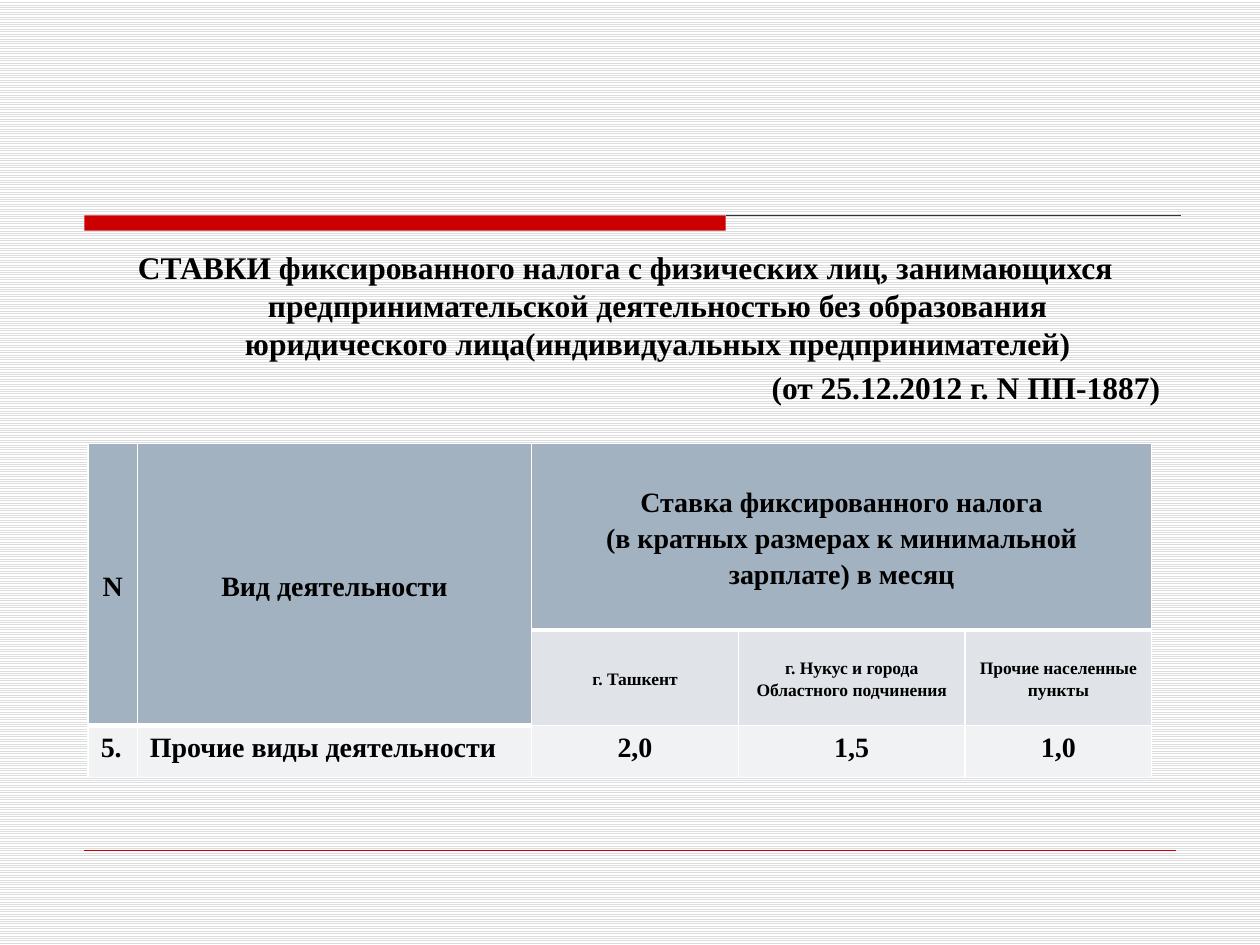
from lxml import etree
from pptx import Presentation
from pptx import util as u
from pptx.dml.color import RGBColor
from pptx.enum import dml, shapes, text
from pptx.oxml.ns import qn

COLORS = {
    "stripe": "DDDDDD",
    "white": "FFFFFF",
    "red": "CC0000",
    "rule": "333333",
    "text": "000000",
    "header": "A3B2C1",
    "subheader": "E0E4E9",
    "row": "F0F2F4",
}
CENTER = text.PP_ALIGN.CENTER


def rgb(name):
    return RGBColor.from_string(COLORS[name])


def format_paragraph(paragraph, size, alignment):
    paragraph.alignment = alignment
    paragraph.font.name = "Times New Roman"
    paragraph.font.size = u.Pt(size)
    paragraph.font.bold = True
    paragraph.font.color.rgb = rgb("text")


presentation = Presentation()
presentation.slide_width = u.Inches(10)
presentation.slide_height = u.Inches(7.5)
slide = presentation.slides.add_slide(presentation.slide_layouts[1])
title = slide.shapes.title.element
title.getparent().remove(title)

background = slide.background.fill
background.patterned()
background.pattern = dml.MSO_PATTERN.LIGHT_HORIZONTAL
background.fore_color.rgb = rgb("stripe")
background.back_color.rgb = rgb("white")

bar = slide.shapes.add_shape(
    shapes.MSO_SHAPE.RECTANGLE,
    u.Inches(0.67), u.Inches(1.71), u.Inches(5.09), u.Inches(0.12),
)
bar.shadow.inherit = False
bar.fill.solid()
bar.fill.fore_color.rgb = rgb("red")
bar.line.fill.background()

for left, right, top, color, width in [
    (5.76, 9.37, 1.71, "rule", 0.75),
    (0.67, 9.33, 6.75, "red", 0.25),
]:
    line = slide.shapes.add_connector(
        shapes.MSO_CONNECTOR.STRAIGHT,
        u.Inches(left), u.Inches(top), u.Inches(right), u.Inches(top),
    )
    line.line.color.rgb = rgb(color)
    line.line.width = u.Pt(width)
    etree.SubElement(line.element.spPr, qn("a:effectLst"))

body = slide.placeholders[1]
body.left, body.top = u.Inches(0.62), u.Inches(1.92)
body.width, body.height = u.Inches(8.75), u.Inches(4.67)
frame = body.text_frame
frame.margin_right = u.Inches(0.16)
frame.text = (
    "СТАВКИ фиксированного налога с физических лиц, занимающихся "
    "предпринимательской деятельностью без образования\v"
    "юридического лица(индивидуальных предпринимателей)\n"
    "(от 25.12.2012 г. N ПП-1887)"
)
for paragraph, alignment in zip(frame.paragraphs, [CENTER, text.PP_ALIGN.RIGHT]):
    format_paragraph(paragraph, 18, alignment)
    paragraph.space_before = u.Pt(3.6)
    properties = paragraph._p.get_or_add_pPr()
    properties.set("marL", str(u.Inches(0.51)))
    properties.set("indent", str(u.Inches(-0.51)))
    properties.insert_element_before(
        etree.Element(qn("a:buNone")), "a:tabLst", "a:defRPr", "a:extLst"
    )

rows = [
    ["N", "Вид деятельности",
     "Ставка фиксированного налога\n(в кратных размерах к минимальной\nзарплате) в месяц", "", ""],
    ["", "", "г. Ташкент", "г. Нукус и города\nОбластного подчинения",
     "Прочие населенные\nпункты"],
    ["5.", "Прочие виды деятельности", "2,0", "1,5", "1,0"],
]
column_widths = [0.39, 3.13, 1.64, 1.8, 1.48]
row_heights = [1.48, 0.76, 0.41]
table = slide.shapes.add_table(
    len(rows), len(column_widths), u.Inches(0.7), u.Inches(3.52),
    u.Inches(sum(column_widths)), u.Inches(sum(row_heights)),
).table
table.horz_banding = False
for column, width in zip(table.columns, column_widths):
    column.width = u.Inches(width)
for row, height in zip(table.rows, row_heights):
    row.height = u.Inches(height)
for first, last in [((0, 0), (1, 0)), ((0, 1), (1, 1)), ((0, 2), (0, 4))]:
    table.cell(*first).merge(table.cell(*last))

for row_index, labels in enumerate(rows):
    for column_index, label in enumerate(labels):
        cell = table.cell(row_index, column_index)
        is_header = row_index == 0 or (row_index == 1 and column_index < 2)
        properties = cell._tc.get_or_add_tcPr()
        for side in "LRTB":
            width = 3 if side == "B" and is_header else 1
            border = etree.SubElement(properties, qn(f"a:ln{side}"), w=str(u.Pt(width)))
            fill = etree.SubElement(border, qn("a:solidFill"))
            etree.SubElement(fill, qn("a:srgbClr"), val=COLORS["white"])
        cell.fill.solid()
        cell.fill.fore_color.rgb = rgb(
            "header" if is_header else ["", "subheader", "row"][row_index]
        )
        if not label:
            continue
        cell.text = label
        if row_index < 2:
            cell.vertical_anchor = text.MSO_ANCHOR.MIDDLE
            cell.margin_left = cell.margin_right = 0
            cell.margin_top = cell.margin_bottom = 0
        is_left = row_index == 2 and column_index < 2
        for paragraph in cell.text_frame.paragraphs:
            format_paragraph(
                paragraph, 10 if row_index == 1 else 16,
                text.PP_ALIGN.LEFT if is_left else CENTER,
            )
            if row_index < 2:
                paragraph.line_spacing = 1.15

presentation.save("out.pptx")
